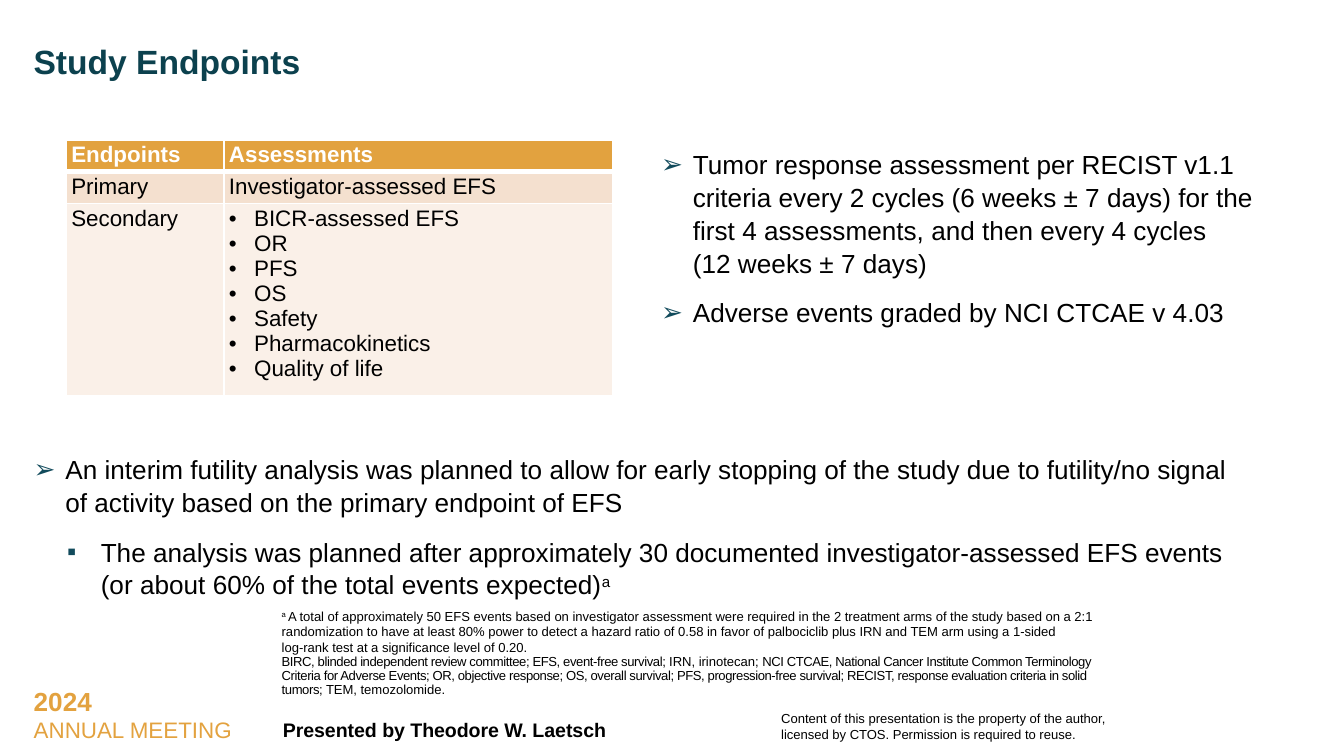
from lxml import etree
from pptx import Presentation
from pptx.dml.color import RGBColor
from pptx.enum.text import MSO_ANCHOR as Anchor, MSO_AUTO_SIZE as AutoSize, PP_ALIGN as Align
from pptx.oxml.ns import qn
from pptx.util import Pt

BLACK = RGBColor(0x00, 0x00, 0x00)
WHITE = RGBColor(0xFF, 0xFF, 0xFF)
TEAL = RGBColor(0x0C, 0x41, 0x4E)
BULLET_TEAL = RGBColor(0x12, 0x4B, 0x5C)
GOLD = RGBColor(0xE3, 0xA2, 0x3F)
HEADER_FILL = RGBColor(0xE2, 0xA2, 0x3F)
PEACH = RGBColor(0xF4, 0xE0, 0xCF)
CREAM = RGBColor(0xFA, 0xF0, 0xE8)


def add_para(frame, spans, size, color=BLACK, bold=False, spacing=None, before=0, after=0,
             bullet=None, bullet_color=BLACK, margin=0, indent=0, level=0):
    """Add a paragraph; spans is a text or a list of (text, run attributes)."""
    para = frame.add_paragraph() if frame.text else frame.paragraphs[0]
    para.alignment = Align.LEFT
    para.level = level
    para.space_before, para.space_after = Pt(before), Pt(after)
    if spacing:
        para.line_spacing = spacing
    if bullet:
        props = para._p.get_or_add_pPr()
        props.set("marL", str(Pt(margin)))
        props.set("indent", str(Pt(-indent)))
        tint = etree.SubElement(props, qn("a:buClr"))
        etree.SubElement(tint, qn("a:srgbClr"), val=str(bullet_color))
        etree.SubElement(props, qn("a:buFont"), typeface="Arial")
        etree.SubElement(props, qn("a:buChar"), char=bullet)
    for text, attributes in [(spans, {})] if isinstance(spans, str) else spans:
        for number, line in enumerate(text.split("\n")):
            if number:
                para.add_line_break()
            span = para.add_run()
            span.text = line
            span.font.name, span.font.size, span.font.bold = "Arial", Pt(size), bold
            span.font.color.rgb = color
            for name, value in attributes.items():
                span._r.get_or_add_rPr().set(name, value)


def prepare(box, place, inset=(0, 0), anchor=Anchor.TOP):
    """Place a text shape and return its wrapped text frame."""
    box.left, box.top, box.width, box.height = [Pt(length) for length in place]
    frame = box.text_frame
    frame.word_wrap, frame.auto_size, frame.vertical_anchor = True, AutoSize.NONE, anchor
    frame.margin_left = frame.margin_right = Pt(inset[0])
    frame.margin_top = frame.margin_bottom = Pt(inset[1])
    return frame


deck = Presentation()
deck.slide_width, deck.slide_height = Pt(720), Pt(405)
page = deck.slides.add_slide(deck.slide_layouts[3])
title, assessment_list, analysis_list = page.placeholders

# Footer texts
footers = [
    ((414, 376.5, 184.5, 25), (4.5, 4.5), Anchor.MIDDLE, [
        ("Content of this presentation is the property of the author,", 7, BLACK, False),
        ("licensed by CTOS. Permission is required to reuse.", 7, BLACK, False)]),
    ((11, 363.5, 122, 39), (7.2, 3.6), Anchor.TOP, [
        ("2024", 14, GOLD, True),
        ("ANNUAL MEETING", 12, GOLD, False)]),
    ((147, 380, 251, 21.5), (4.5, 4.5), Anchor.MIDDLE, [
        ("Presented by Theodore W. Laetsch", 10.5, BLACK, True)]),
]
for place, inset, anchor, lines in footers:
    frame = prepare(page.shapes.add_textbox(0, 0, 0, 0), place, inset, anchor)
    for text, size, color, bold in lines:
        add_para(frame, text, size, color=color, bold=bold)

# Title
add_para(prepare(title, (18, 24.5, 684, 33)), "Study Endpoints", 18,
         color=TEAL, bold=True, spacing=0.9)

# Assessment list beside the table
arrow = dict(size=14, spacing=1.05, after=4.5, bullet="➢", bullet_color=BULLET_TEAL)
frame = prepare(assessment_list, (347, 75, 343, 102), (7.2, 3.6))
add_para(frame, "Tumor response assessment per RECIST v1.1\n"
         "criteria every 2 cycles (6 weeks ± 7 days) for the first 4 assessments, "
         "and then every 4 cycles\n(12 weeks ± 7 days)",
         level=2, margin=17, indent=17, **arrow)
add_para(frame, "Adverse events graded by NCI CTCAE v 4.03",
         level=2, before=4.5, margin=17, indent=17, **arrow)

# Endpoint table
rows = [
    (17, HEADER_FILL, "Endpoints", ["Assessments"]),
    (17, PEACH, "Primary", ["Investigator-assessed EFS"]),
    (103, CREAM, "Secondary", ["BICR-assessed EFS", "OR", "PFS", "OS", "Safety",
                               "Pharmacokinetics", "Quality of life"]),
]
table = page.shapes.add_table(3, 2, Pt(35.5), Pt(75), Pt(293), Pt(137)).table
table.columns[0].width, table.columns[1].width = Pt(84.5), Pt(208.5)
for row, (height, fill, endpoint, assessments) in enumerate(rows):
    table.rows[row].height = Pt(height)
    for column, lines in enumerate([[endpoint], assessments]):
        cell = table.cell(row, column)
        cell.margin_left = cell.margin_right = Pt(2.7)
        cell.margin_top = cell.margin_bottom = Pt(1.35)
        for side in ("L", "R", "T", "B"):
            thick = (row, side) in [(0, "B"), (1, "T")]
            border = etree.SubElement(cell._tc.get_or_add_tcPr(), qn(f"a:ln{side}"),
                                      w=str(Pt(3 if thick else 1)))
            paint = etree.SubElement(border, qn("a:solidFill"))
            etree.SubElement(paint, qn("a:srgbClr"), val=str(WHITE))
        cell.fill.solid()
        cell.fill.fore_color.rgb = fill
        for line in lines:
            add_para(cell.text_frame, line, 12, color=BLACK if row else WHITE, bold=row == 0,
                     bullet="•" if len(lines) > 1 else None, margin=13.5, indent=13.5)

# Interim analysis list
frame = prepare(analysis_list, (18, 242, 647, 78))
add_para(frame, "An interim futility analysis was planned to allow for early stopping of the study "
         "due to futility/no signal of activity based on the primary endpoint of EFS",
         margin=17, indent=17, **arrow)
add_para(frame, [("The analysis was planned after approximately 30 documented investigator-assessed "
                  "EFS events (or about 60% of the total events expected)", {}),
                 ("a", {"baseline": "30000"})],
         level=1, before=4.5, margin=36, indent=18, **{**arrow, "bullet": "▪"})

# Footnote
tight = {"spc": "-20"}
frame = prepare(page.shapes.add_textbox(0, 0, 0, 0), (149.5, 324, 446.5, 51),
                (1.45, 1.45), Anchor.BOTTOM)
add_para(frame, [("a ", {"baseline": "30000"}),
                 ("A total of approximately 50 EFS events based on investigator assessment were "
                  "required in the 2 treatment arms of the study based on a 2:1 randomization to "
                  "have at least 80% power to detect a hazard ratio of 0.58 in favor of palbociclib "
                  "plus IRN and TEM arm using a 1-sided", {})], 7)
add_para(frame, "log-rank test at a significance level of 0.20.", 7)
add_para(frame, [("BIRC, blinded independent review committee; EFS, event-free survival; ", tight),
                 ("IRN, irinotecan; ", {}),
                 ("NCI CTCAE, National Cancer Institute Common Terminology Criteria for Adverse "
                  "Events; OR, objective response; OS, overall survival; PFS, progression-free "
                  "survival; RECIST, response evaluation criteria in solid tumors; ", tight),
                 ("TEM, temozolomide", {}), (".", tight)], 7, spacing=0.9)

deck.save("out.pptx")
